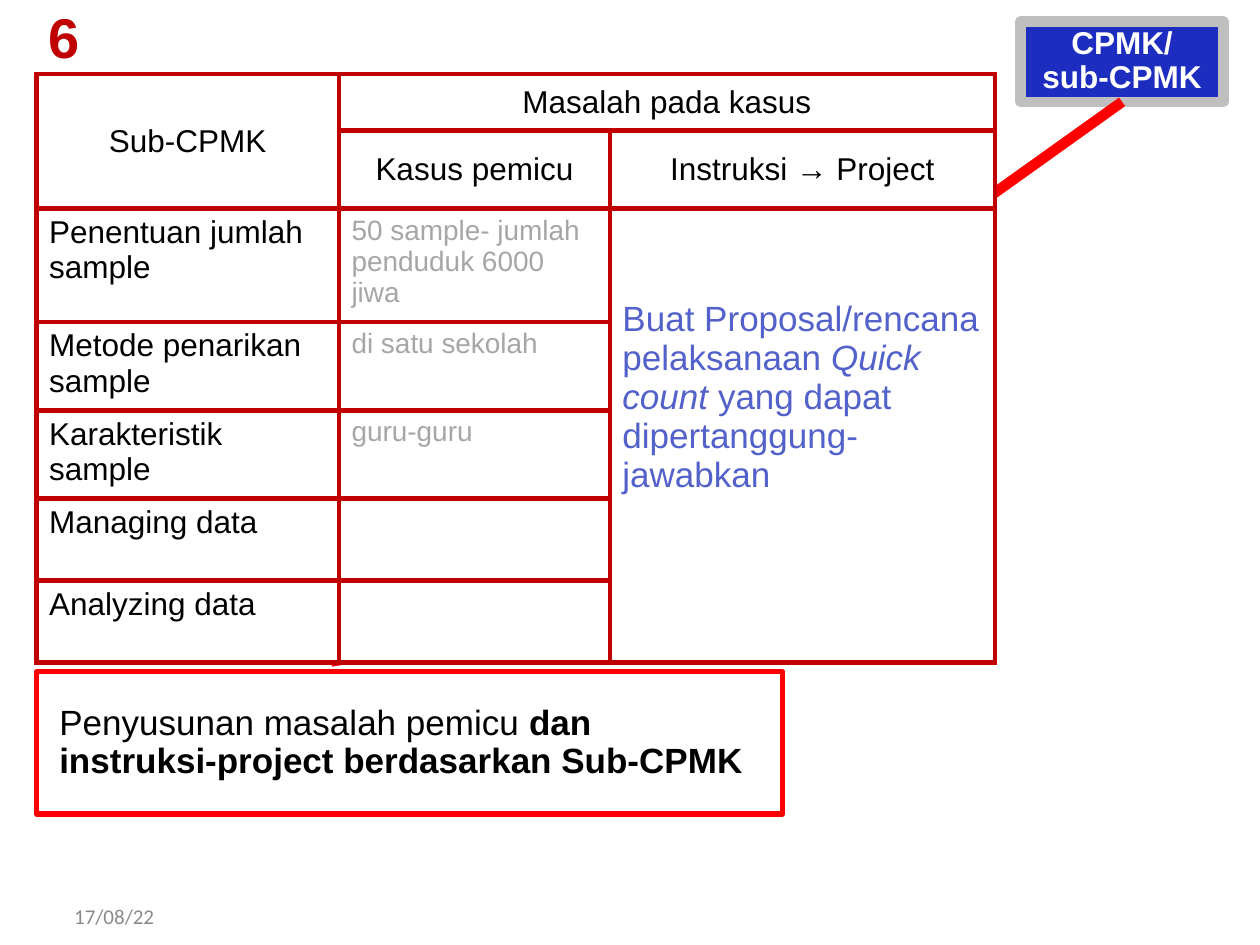
from pptx import Presentation
from pptx.dml.color import RGBColor
from pptx.enum.shapes import MSO_CONNECTOR, MSO_SHAPE
from pptx.enum.text import MSO_ANCHOR, PP_ALIGN
from pptx.oxml.ns import qn
from pptx.util import Pt
from lxml.etree import SubElement, Element

COLORS = {
    "white": "FFFFFF", "black": "000000", "blue": "1C2DC0", "silver": "BFBFBF",
    "red": "FF0000", "crimson": "C00000", "muted": "A6A6A6", "violet": "5361CA",
    "date": "898989",
}
COLUMN_WIDTHS = [172.8, 154.8, 220]
ROW_HEIGHTS = [32.4, 44.6, 64.8, 50.4, 50.4, 46.8, 46.8]
TOPICS = [
    ("Penentuan jumlah sample", "50 sample- jumlah penduduk 6000 jiwa"),
    ("Metode penarikan sample", "di satu sekolah"),
    ("Karakteristik sample", "guru-guru"),
    ("Managing data", ""),
    ("Analyzing data", ""),
]


def color(name):
    return RGBColor.from_string(COLORS[name])


def add_run(paragraph, text, size, color_name, font_name="Arial", bold=False, italic=False):
    run = paragraph.add_run()
    run.text = text
    font = run.font
    font.name, font.size, font.bold, font.italic = font_name, Pt(size), bold, italic
    font.color.rgb = color(color_name)


def add_label(slide, box, text, size, color_name, font_name="Arial", bold=False,
              anchor=MSO_ANCHOR.TOP):
    text_box = slide.shapes.add_textbox(*map(Pt, box))
    frame = text_box.text_frame
    frame.word_wrap = True
    frame.vertical_anchor = anchor
    add_run(frame.paragraphs[0], text, size, color_name, font_name, bold)


def add_framed_box(slide, box, fill_name, line_name, line_width, lines, size, color_name,
                   alignment, indent=0):
    shape = slide.shapes.add_shape(MSO_SHAPE.RECTANGLE, *map(Pt, box))
    shape.shadow.inherit = False
    if fill_name:
        shape.fill.solid()
        shape.fill.fore_color.rgb = color(fill_name)
    else:
        shape.fill.background()
    shape.line.color.rgb = color(line_name)
    shape.line.width = Pt(line_width)
    frame = shape.text_frame
    frame.word_wrap = True
    frame.vertical_anchor = MSO_ANCHOR.MIDDLE
    frame.margin_left = frame.margin_right = Pt(5)
    frame.margin_top = frame.margin_bottom = Pt(3)
    for index, runs in enumerate(lines):
        paragraph = frame.add_paragraph() if index else frame.paragraphs[0]
        paragraph.alignment = alignment
        paragraph.line_spacing = 0.9
        if indent:
            paragraph._p.get_or_add_pPr().set("marL", str(Pt(indent)))
        for text, bold in runs:
            add_run(paragraph, text, size, color_name, bold=bold)
    return shape


def add_arrow(slide, source, end):
    connector = slide.shapes.add_connector(MSO_CONNECTOR.STRAIGHT, 0, 0, *map(Pt, end))
    connector.begin_connect(source, 2)
    connector.line.color.rgb = color("red")
    connector.line.width = Pt(6)
    properties = connector._element.spPr
    SubElement(properties.find(qn("a:ln")), qn("a:tailEnd"), type="triangle")
    SubElement(properties, qn("a:effectLst"))


def style_cell(cell):
    cell.fill.solid()
    cell.fill.fore_color.rgb = color("white")
    properties = cell._tc.get_or_add_tcPr()
    for index, side in enumerate(("lnL", "lnR", "lnT", "lnB")):
        border = Element(qn(f"a:{side}"), w=str(Pt(3)))
        fill = SubElement(border, qn("a:solidFill"))
        SubElement(fill, qn("a:srgbClr"), val=COLORS["crimson"])
        properties.insert(index, border)


def add_case_table(slide, left, top):
    frame = slide.shapes.add_table(
        len(ROW_HEIGHTS), len(COLUMN_WIDTHS), Pt(left), Pt(top),
        Pt(sum(COLUMN_WIDTHS)), Pt(sum(ROW_HEIGHTS)))
    table = frame.table
    for column, width in zip(table.columns, COLUMN_WIDTHS):
        column.width = Pt(width)
    for row, height in zip(table.rows, ROW_HEIGHTS):
        row.height = Pt(height)
    for cell in table.iter_cells():
        style_cell(cell)
    for first, last in (((0, 0), (1, 0)), ((0, 1), (0, 2)), ((2, 2), (6, 2))):
        table.cell(*first).merge(table.cell(*last))

    headers = {(0, 0): "Sub-CPMK", (0, 1): "Masalah pada kasus",
               (1, 1): "Kasus pemicu", (1, 2): "Instruksi → Project"}
    for position, text in headers.items():
        cell = table.cell(*position)
        cell.vertical_anchor = MSO_ANCHOR.MIDDLE
        paragraph = cell.text_frame.paragraphs[0]
        paragraph.alignment = PP_ALIGN.CENTER
        add_run(paragraph, text, 18, "black")

    for row, (topic, case) in enumerate(TOPICS, start=2):
        add_run(table.cell(row, 0).text_frame.paragraphs[0], topic, 18, "black")
        if case:
            add_run(table.cell(row, 1).text_frame.paragraphs[0], case, 16, "muted")

    project = table.cell(2, 2)
    project.margin_top = Pt(52)
    paragraph = project.text_frame.paragraphs[0]
    for text, italic in (("Buat Proposal/rencana pelaksanaan ", False),
                         ("Quick count ", True),
                         ("yang dapat dipertanggung-jawabkan", False)):
        add_run(paragraph, text, 20, "violet", italic=italic)


def main():
    presentation = Presentation()
    presentation.slide_width, presentation.slide_height = Pt(720), Pt(540)
    slide = presentation.slides.add_slide(presentation.slide_layouts[6])
    outcome_box = add_framed_box(
        slide, (583.2, 12.2, 116, 46), "blue", "silver", 6,
        [[("CPMK/", True)], [("sub-CPMK", True)]], 18, "white", PP_ALIGN.CENTER)
    add_label(slide, (35.3, 509, 168, 28.8), "17/08/22", 12, "date", "Calibri",
              anchor=MSO_ANCHOR.MIDDLE)
    add_arrow(slide, outcome_box, (189.4, 381))
    add_case_table(slide, 20.9, 42.2)
    add_label(slide, (20.9, -2, 29.5, 46), "6", 32, "crimson", bold=True)
    add_framed_box(
        slide, (20.9, 383.8, 426.2, 81.4), None, "red", 3,
        [[("Penyusunan masalah pemicu ", False), ("dan", True)],
         [("instruksi-project berdasarkan Sub-CPMK", True)]],
        20, "black", PP_ALIGN.LEFT, indent=8)
    presentation.save("out.pptx")


if __name__ == "__main__":
    main()
